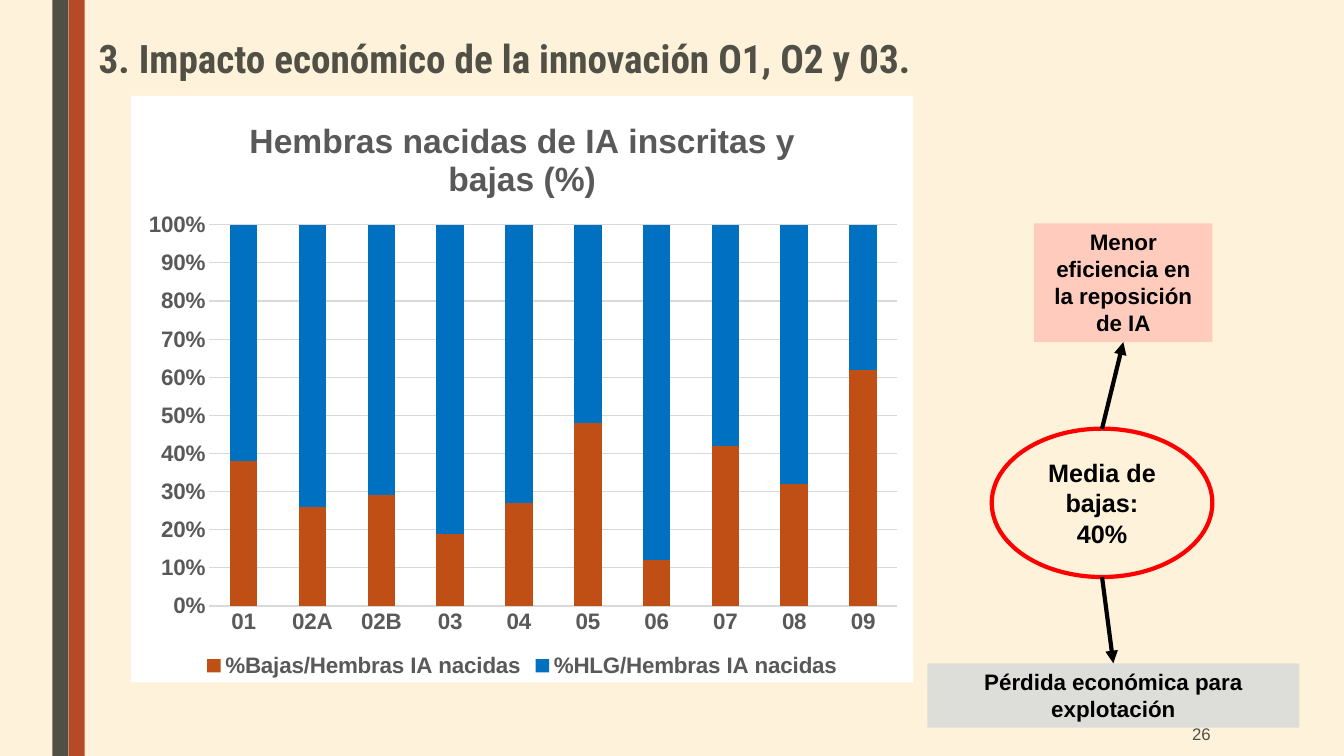
from dataclasses import dataclass
from typing import Any, Optional

from pptx import Presentation
from pptx.chart.data import CategoryChartData
from pptx.dml.color import RGBColor
from pptx.enum.chart import XL_CHART_TYPE as ChartType
from pptx.enum.chart import XL_LEGEND_POSITION as LegendPosition
from pptx.enum.chart import XL_TICK_MARK as TickMark
from pptx.enum.shapes import MSO_CONNECTOR as Connector
from pptx.enum.shapes import MSO_SHAPE as Preset
from pptx.enum.text import MSO_ANCHOR as Anchor
from pptx.enum.text import MSO_AUTO_SIZE as AutoSize
from pptx.enum.text import PP_ALIGN as Align
from pptx.oxml import parse_xml
from pptx.oxml.ns import nsdecls
from pptx.util import Pt


@dataclass(frozen=True)
class Theme:
    background: str = "FFF2DA"
    dark: str = "505046"
    rust: str = "B64926"
    loss: str = "DDDDD9"
    efficiency: str = "FFCBBD"
    ring: str = "FF0000"
    ink: str = "000000"
    chart_text: str = "595959"
    grid: str = "D9D9D9"
    chart_area: str = "FFFFFF"
    deaths: str = "C04F15"
    registered: str = "0070C0"
    body_font: str = "Arial"
    title_font: str = "Roboto Condensed"
    title_size: float = 28
    chart_title_size: float = 24
    average_size: float = 18
    label_size: float = 16
    number_size: float = 12
    stroke: float = 3
    hairline: float = 0.75


THEME = Theme()


@dataclass(frozen=True)
class Box:
    left: float
    top: float
    width: float
    height: float

    def lengths(self) -> tuple:
        return Pt(self.left), Pt(self.top), Pt(self.width), Pt(self.height)


@dataclass(frozen=True)
class Block:
    """A preset shape, or a plain text box when preset is None."""
    box: Box
    preset: Optional[Any] = Preset.RECTANGLE
    fill: Optional[str] = None
    outline: Optional[str] = None
    lines: tuple = ()
    size: float = THEME.label_size
    font: str = THEME.body_font
    color: str = THEME.ink
    bold: bool = True
    align: Any = Align.CENTER
    anchor: Any = Anchor.TOP
    auto_size: Any = AutoSize.NONE
    line_spacing: Optional[float] = None


@dataclass(frozen=True)
class Series:
    name: str
    values: tuple
    color: str


STRIPES = (
    Block(Box(49, 0, 11.5, 541.5), fill=THEME.rust),
    Block(Box(37.4, 0, 11.5, 540), fill=THEME.dark),
)
TITLE = Block(
    Box(63.4, 25.2, 833.8, 43.2), preset=None,
    lines=("3. Impacto económico de la innovación O1, O2 y 03.",),
    size=THEME.title_size, font=THEME.title_font, color=THEME.dark,
    align=Align.LEFT, line_spacing=0.89)
LOSS = Block(
    Box(662.4, 473.8, 265.7, 46), fill=THEME.loss,
    lines=("Pérdida económica para explotación",), auto_size=AutoSize.SHAPE_TO_FIT_TEXT)
EFFICIENCY = Block(
    Box(738.7, 159.6, 127.4, 84.8), fill=THEME.efficiency,
    lines=("Menor eficiencia en la reposición de IA",), auto_size=AutoSize.SHAPE_TO_FIT_TEXT)
AVERAGE = Block(
    Box(708.4, 306.2, 157.6, 106), preset=Preset.OVAL, outline=THEME.ring,
    lines=("Media de bajas:", "40%"), size=THEME.average_size, anchor=Anchor.MIDDLE)
SLIDE_NUMBER = Block(
    Box(745.9, 508.3, 126, 31.7), preset=None, lines=("26",), size=THEME.number_size,
    color=THEME.dark, bold=False, align=Align.RIGHT, anchor=Anchor.MIDDLE)

CHART_BOX = Box(93.6, 68.4, 558.7, 419)
PLOT_LAYOUT = {"x": 0.1, "y": 0.22, "w": 0.88, "h": 0.65}
CHART_TITLE = "Hembras nacidas de IA inscritas y bajas (%)"
FARMS = ("01", "02A", "02B", "03", "04", "05", "06", "07", "08", "09")
DEATH_RATES = (0.38, 0.26, 0.29, 0.19, 0.27, 0.48, 0.12, 0.42, 0.32, 0.62)
SERIES = (
    Series("%Bajas/Hembras IA nacidas", DEATH_RATES, THEME.deaths),
    Series("%HLG/Hembras IA nacidas",
           tuple(round(1 - rate, 2) for rate in DEATH_RATES), THEME.registered),
)


def apply(target: Any, values: dict) -> None:
    for name, value in values.items():
        setattr(target, name, value)


def paint(fill: Any, color: str) -> None:
    fill.solid()
    fill.fore_color.rgb = RGBColor.from_string(color)


def style_font(font: Any, size: float, color: str, name: str = THEME.body_font,
               bold: bool = True) -> None:
    apply(font, {"size": Pt(size), "name": name, "bold": bold})
    font.color.rgb = RGBColor.from_string(color)


def style_line(line: Any, color: str, width: float) -> None:
    paint(line.fill, color)
    line.width = Pt(width)


def add_block(slide: Any, block: Block) -> Any:
    if block.preset is None:
        shape = slide.shapes.add_textbox(*block.box.lengths())
    else:
        shape = slide.shapes.add_shape(block.preset, *block.box.lengths())
        shape.shadow.inherit = False
        if block.fill:
            paint(shape.fill, block.fill)
        else:
            shape.fill.background()
        if block.outline:
            style_line(shape.line, block.outline, THEME.stroke)
        else:
            shape.line.fill.background()
    frame = shape.text_frame
    apply(frame, {"word_wrap": True, "auto_size": block.auto_size,
                  "vertical_anchor": block.anchor})
    for index, text in enumerate(block.lines):
        paragraph = frame.add_paragraph() if index else frame.paragraphs[0]
        apply(paragraph, {"alignment": block.align, "line_spacing": block.line_spacing})
        run = paragraph.add_run()
        run.text = text
        style_font(run.font, block.size, block.color, block.font, block.bold)
    return shape


def add_arrow(slide: Any, start: tuple, end: tuple) -> Any:
    arrow = slide.shapes.add_connector(
        Connector.STRAIGHT, *(Pt(value) for value in start + end))
    style_line(arrow.line, THEME.ink, THEME.stroke)
    arrow.line._get_or_add_ln().append(
        parse_xml(f'<a:tailEnd {nsdecls("a")} type="triangle"/>'))
    arrow.element.spPr.append(parse_xml(f'<a:effectLst {nsdecls("a")}/>'))
    return arrow


def set_chart_area(chart: Any) -> None:
    """Fill the chart background and fix the inner plot rectangle."""
    area = chart.element.xpath("c:chart")[0]
    area.addnext(parse_xml(
        f'<c:spPr {nsdecls("c", "a")}><a:solidFill><a:srgbClr val="{THEME.chart_area}"/>'
        '</a:solidFill><a:ln><a:noFill/></a:ln></c:spPr>'))
    plot_area = area.xpath("c:plotArea")[0]
    for layout in plot_area.xpath("c:layout"):
        plot_area.remove(layout)
    modes = '<c:xMode val="edge"/><c:yMode val="edge"/>'
    sizes = "".join(f'<c:{key} val="{value}"/>' for key, value in PLOT_LAYOUT.items())
    plot_area.insert(0, parse_xml(
        f'<c:layout {nsdecls("c")}><c:manualLayout><c:layoutTarget val="inner"/>'
        f'{modes}{sizes}</c:manualLayout></c:layout>'))


def add_rate_chart(slide: Any) -> None:
    data = CategoryChartData(number_format="0%")
    data.categories = FARMS
    for series in SERIES:
        data.add_series(series.name, series.values)
    chart = slide.shapes.add_chart(
        ChartType.COLUMN_STACKED, *CHART_BOX.lengths(), data).chart
    style_font(chart.font, THEME.label_size, THEME.chart_text)
    chart.has_title = True
    title = chart.chart_title
    title.include_in_layout = False
    title.text_frame.text = CHART_TITLE
    style_font(title.text_frame.paragraphs[0].runs[0].font,
               THEME.chart_title_size, THEME.chart_text)
    chart.has_legend = True
    apply(chart.legend, {"position": LegendPosition.BOTTOM, "include_in_layout": False})
    style_font(chart.legend.font, THEME.label_size, THEME.chart_text)
    plot = chart.plots[0]
    apply(plot, {"gap_width": 150, "overlap": 100, "vary_by_categories": False})
    for drawn, series in zip(plot.series, SERIES):
        paint(drawn.format.fill, series.color)
    for axis in (chart.category_axis, chart.value_axis):
        apply(axis, {"major_tick_mark": TickMark.NONE, "minor_tick_mark": TickMark.NONE})
        style_font(axis.tick_labels.font, THEME.label_size, THEME.chart_text)
    style_line(chart.category_axis.format.line, THEME.grid, THEME.hairline)
    value_axis = chart.value_axis
    apply(value_axis, {"minimum_scale": 0, "maximum_scale": 1, "major_unit": 0.1,
                       "has_major_gridlines": True})
    apply(value_axis.tick_labels, {"number_format": "0%", "number_format_is_linked": False})
    value_axis.format.line.fill.background()
    style_line(value_axis.major_gridlines.format.line, THEME.grid, THEME.hairline)
    set_chart_area(chart)


def main() -> None:
    presentation = Presentation()
    apply(presentation, {"slide_width": Pt(960), "slide_height": Pt(540)})
    slide = presentation.slides.add_slide(presentation.slide_layouts[6])
    paint(slide.background.fill, THEME.background)
    for block in STRIPES + (TITLE,):
        add_block(slide, block)
    add_rate_chart(slide)
    loss, efficiency, average = (
        add_block(slide, block) for block in (LOSS, EFFICIENCY, AVERAGE))
    ring = AVERAGE.box
    center = ring.left + ring.width / 2
    upward = add_arrow(slide, (center, ring.top), (center, ring.top))
    upward.begin_connect(average, 0)
    upward.end_connect(efficiency, 2)
    bottom = ring.top + ring.height
    downward = add_arrow(slide, (center, bottom), (center, bottom))
    downward.end_connect(loss, 0)
    add_block(slide, SLIDE_NUMBER)
    presentation.save("out.pptx")


if __name__ == "__main__":
    main()
